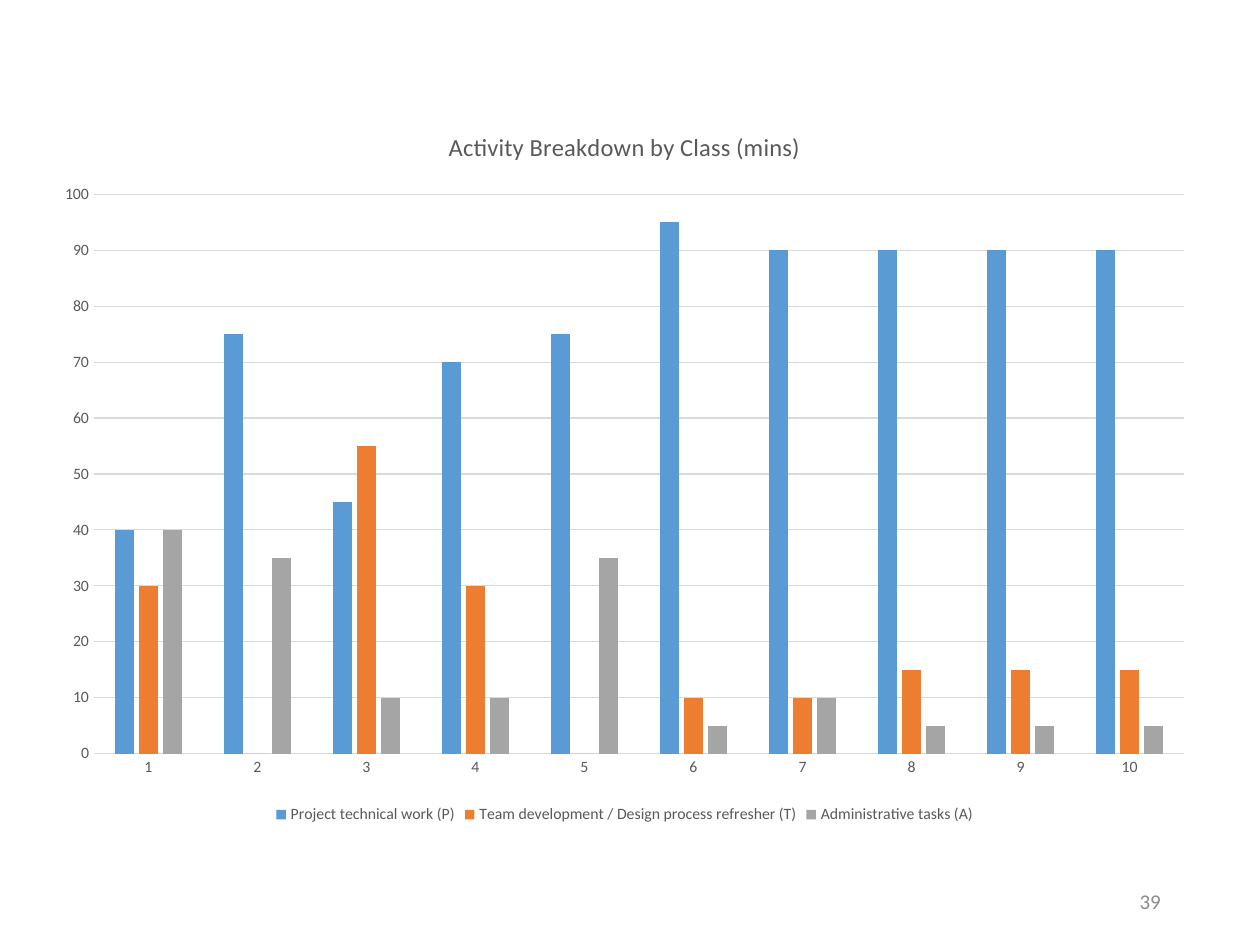
"""Build a slide with a clustered column chart of class activities."""
from pptx import Presentation
from pptx import util as u
from pptx.chart.data import CategoryChartData
from pptx.dml.color import RGBColor
from pptx.enum import chart as kinds, text

FONT = "Calibri"
TEXT_GREY = RGBColor(0x59, 0x59, 0x59)
LINE_GREY = RGBColor(0xD9, 0xD9, 0xD9)
NUMBER_GREY = RGBColor(0x8C, 0x8C, 0x8C)
BLUE = RGBColor(0x5B, 0x9B, 0xD5)
ORANGE = RGBColor(0xED, 0x7D, 0x31)
GREY = RGBColor(0xA5, 0xA5, 0xA5)

TITLE = "Activity Breakdown by Class (mins)"
PAGE_NUMBER = "39"
CLASSES = [str(number) for number in range(1, 11)]
ACTIVITIES = [
    ("Project technical work (P)", BLUE,
     (40, 75, 45, 70, 75, 95, 90, 90, 90, 90)),
    ("Team development / Design process refresher (T)", ORANGE,
     (30, 0, 55, 30, 0, 10, 10, 15, 15, 15)),
    ("Administrative tasks (A)", GREY,
     (40, 35, 10, 10, 35, 5, 10, 5, 5, 5)),
]


def style_font(font, size, colour=TEXT_GREY):
    font.name = FONT
    font.size = u.Pt(size)
    font.bold = False
    font.color.rgb = colour


def style_line(line):
    line.color.rgb = LINE_GREY
    line.width = u.Pt(0.75)


def style_axis(axis):
    axis.major_tick_mark = kinds.XL_TICK_MARK.NONE
    axis.minor_tick_mark = kinds.XL_TICK_MARK.NONE
    style_font(axis.tick_labels.font, 9)


def add_activity_chart(page):
    data = CategoryChartData()
    data.categories = CLASSES
    for name, _, minutes in ACTIVITIES:
        data.add_series(name, minutes)
    chart = page.shapes.add_chart(
        kinds.XL_CHART_TYPE.COLUMN_CLUSTERED,
        u.Cm(0.84), u.Cm(2.11), u.Cm(23.5), u.Cm(14.6), data).chart
    style_font(chart.font, 10)

    chart.has_title = True
    title = chart.chart_title.text_frame
    title.text = TITLE
    style_font(title.paragraphs[0].runs[0].font, 14)

    chart.has_legend = True
    chart.legend.position = kinds.XL_LEGEND_POSITION.BOTTOM
    chart.legend.include_in_layout = False
    style_font(chart.legend.font, 9)

    style_axis(chart.category_axis)
    style_line(chart.category_axis.format.line)
    minutes_axis = chart.value_axis
    style_axis(minutes_axis)
    minutes_axis.minimum_scale = 0
    minutes_axis.maximum_scale = 100
    minutes_axis.major_unit = 10
    minutes_axis.format.line.fill.background()
    style_line(minutes_axis.major_gridlines.format.line)

    plot = chart.plots[0]
    plot.vary_by_categories = False
    plot.gap_width = 219
    plot.overlap = -27
    for series, (_, colour, _) in zip(plot.series, ACTIVITIES):
        series.format.fill.solid()
        series.format.fill.fore_color.rgb = colour


def add_page_number(page):
    box = page.shapes.add_textbox(u.Cm(17.93), u.Cm(17.65), u.Cm(5.72), u.Cm(1.02))
    frame = box.text_frame
    frame.word_wrap = True
    frame.vertical_anchor = text.MSO_ANCHOR.MIDDLE
    frame.text = PAGE_NUMBER
    para = frame.paragraphs[0]
    para.alignment = text.PP_ALIGN.RIGHT
    style_font(para.runs[0].font, 12, NUMBER_GREY)


def main():
    deck = Presentation()
    deck.slide_width, deck.slide_height = u.Cm(25.4), u.Cm(19.05)
    page = deck.slides.add_slide(deck.slide_layouts[6])
    add_page_number(page)
    add_activity_chart(page)
    deck.save("out.pptx")


if __name__ == "__main__":
    main()
